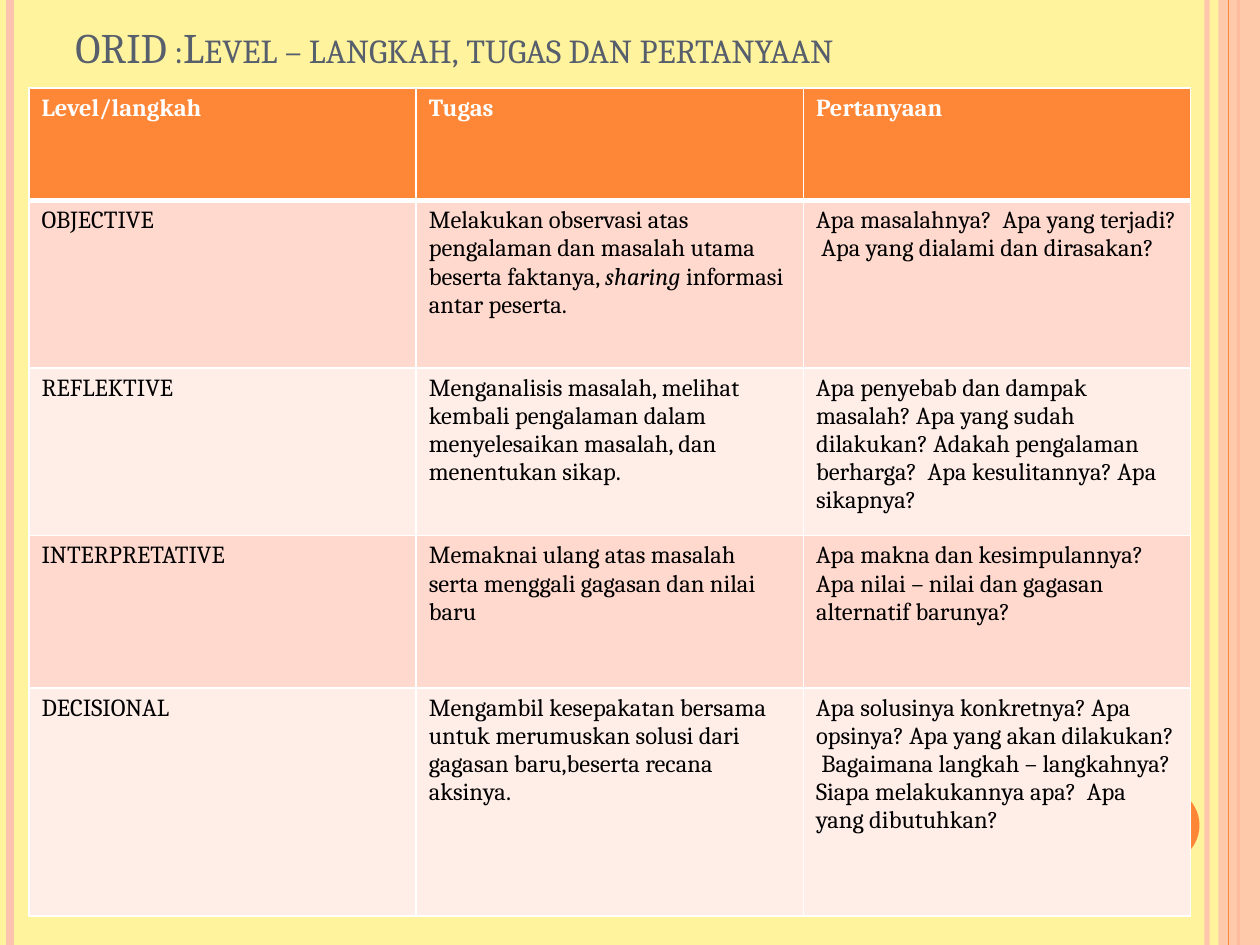
from dataclasses import dataclass

from lxml.etree import SubElement
from pptx import Presentation
from pptx.dml.color import RGBColor as RGB
from pptx.enum.shapes import MSO_CONNECTOR as Connector, MSO_SHAPE as Shape
from pptx.enum.text import MSO_ANCHOR as Anchor
from pptx.oxml import parse_xml
from pptx.oxml.ns import nsdecls, qn
from pptx.util import Inches, Pt


@dataclass(frozen=True)
class Theme:
    font: str = "Cambria"
    title_size: int = 24
    table_size: int = 14
    page: str = "FFF39D"
    accent: str = "FE8637"
    soft: str = "FEC3AE"
    title: str = "575F6D"
    white: str = "FFFFFF"
    black: str = "000000"
    bands: tuple = ("FFD9CE", "FFEDE8")


class SlideBuilder:
    def __init__(self, slide, theme):
        self.slide = slide
        self.theme = theme
        self.paint(slide.background.fill, theme.page)

    def paint(self, fill, color, opacity=100):
        fill.solid()
        fill.fore_color.rgb = RGB.from_string(color)
        if opacity < 100:
            tint = fill._xPr.find(qn("a:solidFill"))[0]
            SubElement(tint, qn("a:alpha")).set("val", str(opacity * 1000))

    def add_text(self, paragraph, text, color, size, **extras):
        run = paragraph.add_run()
        run.text = text
        values = {"name": self.theme.font, "size": Pt(size), "bold": False, **extras}
        for attribute, value in values.items():
            setattr(run.font, attribute, value)
        run.font.color.rgb = RGB.from_string(color)
        return run

    def stripe(self, x, color, width, opacity=100):
        line = self.slide.shapes.add_connector(
            Connector.STRAIGHT, Inches(x), 0, Inches(x), Inches(7.5))
        line.line.width = Pt(width)
        self.paint(line.line.fill, color, opacity)
        SubElement(line._element.spPr, qn("a:effectLst"))

    def block(self, kind, box, color, opacity=100):
        block = self.slide.shapes.add_shape(kind, *map(Inches, box))
        block.shadow.inherit = False
        self.paint(block.fill, color, opacity)
        block.line.fill.background()

    def heading(self, text, box):
        frame = self.slide.shapes.add_textbox(*map(Inches, box)).text_frame
        frame.word_wrap = True
        frame.vertical_anchor = Anchor.BOTTOM
        run = self.add_text(frame.paragraphs[0], text, self.theme.title, self.theme.title_size)
        run._r.get_or_add_rPr().set("cap", "small")

    def borders(self, cell, top, bottom):
        widths = {"L": 1, "R": 1, "T": top, "B": bottom}
        for position, (side, width) in enumerate(widths.items()):
            cell._tc.get_or_add_tcPr().insert(position, parse_xml(
                f'<a:ln{side} {nsdecls("a")} w="{Pt(width)}"><a:solidFill>'
                f'<a:srgbClr val="{self.theme.white}"/></a:solidFill></a:ln{side}>'))

    def table(self, rows, box, heights):
        theme = self.theme
        columns = len(rows[0])
        grid = self.slide.shapes.add_table(len(rows), columns, *map(Inches, box)).table
        for column in grid.columns:
            column.width = Inches(box[2] / columns)
        for r, (row, height) in enumerate(zip(rows, heights)):
            grid.rows[r].height = Inches(height)
            header = r == 0
            fill = theme.accent if header else theme.bands[(r - 1) % 2]
            color = theme.white if header else theme.black
            for c, content in enumerate(row):
                cell = grid.cell(r, c)
                self.paint(cell.fill, fill)
                self.borders(cell, top=3 if r == 1 else 1, bottom=3 if header else 1)
                for i, part in enumerate(content.split("*")):
                    self.add_text(cell.text_frame.paragraphs[0], part, color,
                                  theme.table_size, bold=header, italic=i % 2 == 1)


STEPS = [
    ("Level/langkah", "Tugas", "Pertanyaan"),
    ("OBJECTIVE",
     "Melakukan observasi atas pengalaman dan masalah utama beserta faktanya, "
     "*sharing *informasi antar peserta.",
     "Apa masalahnya?  Apa yang terjadi?  Apa yang dialami dan dirasakan?"),
    ("REFLEKTIVE",
     "Menganalisis masalah, melihat kembali pengalaman dalam menyelesaikan "
     "masalah, dan menentukan sikap.",
     "Apa penyebab dan dampak masalah? Apa yang sudah dilakukan? Adakah "
     "pengalaman berharga?  Apa kesulitannya? Apa sikapnya?"),
    ("INTERPRETATIVE",
     "Memaknai ulang atas masalah serta menggali gagasan dan nilai baru",
     "Apa makna dan kesimpulannya? Apa nilai – nilai dan gagasan alternatif barunya?"),
    ("DECISIONAL",
     "Mengambil kesepakatan bersama untuk merumuskan solusi dari gagasan "
     "baru,beserta recana aksinya.",
     "Apa solusinya konkretnya? Apa opsinya? Apa yang akan dilakukan?  Bagaimana "
     "langkah – langkahnya?  Siapa melakukannya apa?  Apa yang dibutuhkan?"),
]


def main():
    deck = Presentation()
    deck.slide_width, deck.slide_height = Inches(10), Inches(7.5)
    theme = Theme()
    page = SlideBuilder(deck.slides.add_slide(deck.slide_layouts[6]), theme)

    page.stripe(9.58, theme.soft, 3, 93)
    page.stripe(0.08, theme.soft, 4.5)
    page.stripe(9.83, theme.accent, 1.5)
    page.block(Shape.RECTANGLE, (9.67, 0, 0.33, 7.5), theme.soft, 87)
    page.stripe(9.75, theme.accent, 0.75)
    page.block(Shape.OVAL, (8.92, 6.25, 0.6, 0.6), theme.accent)
    page.heading("ORID :Level – langkah, tugas dan pertanyaan", (0.5, 0, 8.17, 0.62))
    page.table(STEPS, (0.23, 0.7, 9.22, 6.56), (0.89, 1.33, 1.33, 1.21, 1.81))

    deck.save("out.pptx")


if __name__ == "__main__":
    main()
